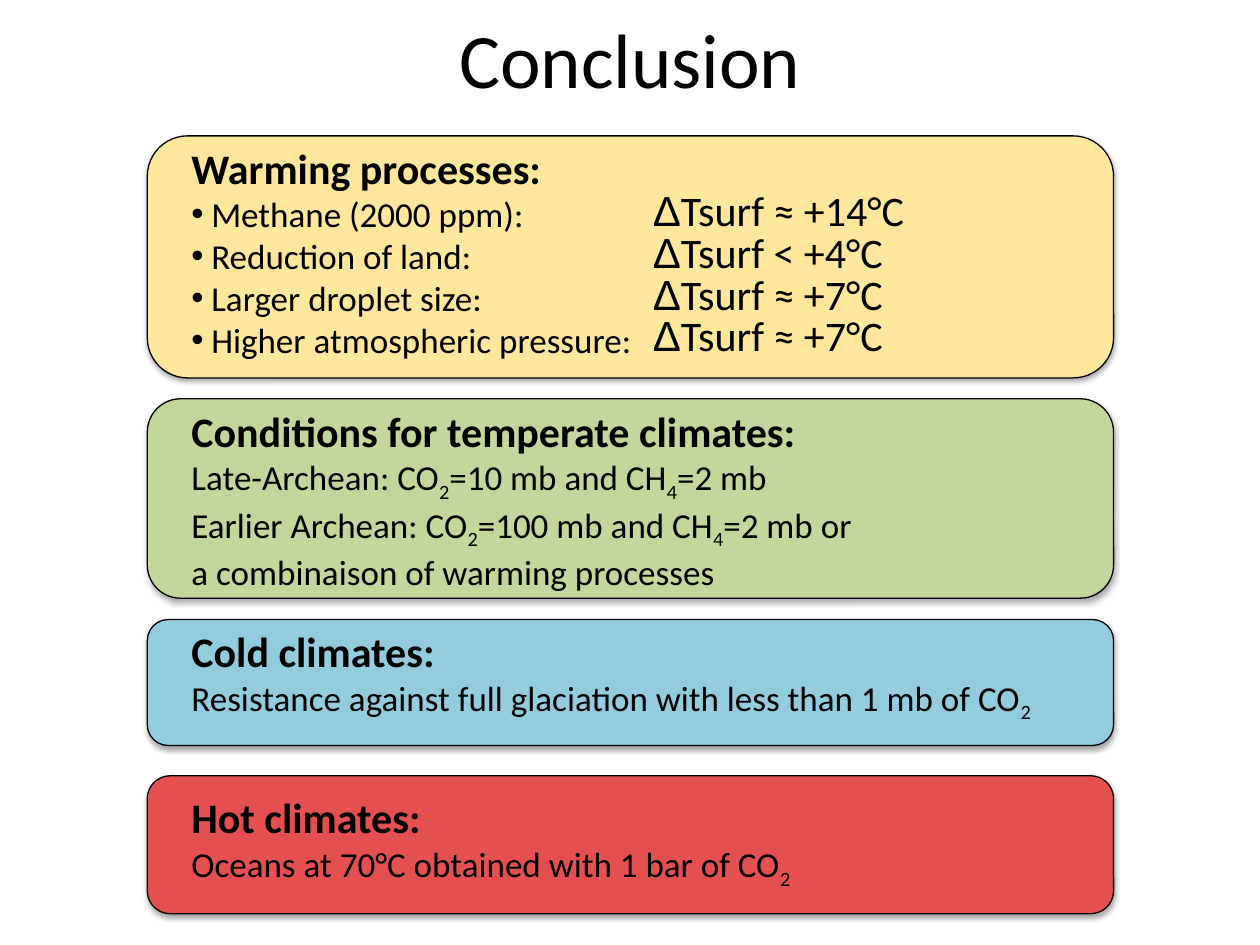
from lxml import etree
from pptx import Presentation
from pptx.dml.color import RGBColor
from pptx.enum.shapes import MSO_SHAPE
from pptx.enum.text import MSO_ANCHOR, MSO_AUTO_SIZE, PP_ALIGN
from pptx.oxml import parse_xml
from pptx.oxml.ns import nsdecls, qn
from pptx.util import Cm, Pt

BLACK = RGBColor(0x00, 0x00, 0x00)
YELLOW = RGBColor(0xFC, 0xE7, 0x9D)
GREEN = RGBColor(0xC3, 0xD6, 0x9B)
BLUE = RGBColor(0x93, 0xCD, 0xDD)
RED = RGBColor(0xE4, 0x4F, 0x4F)

HEADING = {"size": Pt(24), "bold": True}
BODY = {"size": Pt(20), "bold": False}
DELTA = {"size": Pt(24)}

PANEL_X, PANEL_W = 2.97, 19.48
TEXT_INSET = 0.64
BULLET_INDENT = Cm(0.4)
DELTA_X, DELTA_Y, DELTA_STEP = 9.94, 0.86, 0.84

WARMING = [
    ("Methane (2000 ppm):", "Tsurf ≈ +14°C"),
    ("Reduction of land:", "Tsurf < +4°C"),
    ("Larger droplet size:", "Tsurf ≈ +7°C"),
    ("Higher atmospheric pressure:", "Tsurf ≈ +7°C"),
]

# Fill, top, height, text offset, heading, lines; bars enclose subscripts
PANELS = [
    (YELLOW, 2.74, 4.88, 0, "Warming processes:", [name for name, _ in WARMING]),
    (GREEN, 8.04, 4.02, 0, "Conditions for temperate climates:", [
        "Late-Archean: CO|2|=10 mb and CH|4|=2 mb",
        "Earlier Archean: CO|2|=100 mb and CH|4|=2 mb or",
        "a combinaison of warming processes",
    ]),
    (BLUE, 12.49, 2.54, 0, "Cold climates:", [
        "Resistance against full glaciation with less than 1 mb of CO|2|",
    ]),
    (RED, 15.64, 2.78, 0.2, "Hot climates:", [
        "Oceans at 70°C obtained with 1 bar of CO|2|",
    ]),
]


def add_run(p, text, style, name="Calibri"):
    r = p.add_run()
    r.text = text
    r.font.color.rgb = BLACK
    for key, value in {"name": name, **style}.items():
        setattr(r.font, key, value)
    return r


def add_line(p, text, style):
    """Write text whose parts between bars are subscripts."""
    for i, part in enumerate(text.split("|")):
        if part:
            r = add_run(p, part, style)
            if i % 2:
                r.font._element.set("baseline", "-25000")


def add_bullet(p):
    pPr = p._p.get_or_add_pPr()
    pPr.set("marL", str(BULLET_INDENT))
    pPr.set("indent", str(-BULLET_INDENT))
    etree.SubElement(pPr, qn("a:buFont")).set("typeface", "Arial")
    etree.SubElement(pPr, qn("a:buChar")).set("char", "•")


def add_text_box(s, x, y, w, h):
    tf = s.shapes.add_textbox(Cm(x), Cm(y), Cm(w), Cm(h)).text_frame
    tf.word_wrap = True
    return tf


def add_title(s, x, y, w, h):
    tf = add_text_box(s, x, y, w, h)
    tf.vertical_anchor = MSO_ANCHOR.MIDDLE
    p = tf.paragraphs[0]
    p.alignment = PP_ALIGN.CENTER
    add_run(p, "Conclusion", {"size": Pt(44)})


def add_card(s, x, y, w, h, fill):
    sp = s.shapes.add_shape(MSO_SHAPE.ROUNDED_RECTANGLE, Cm(x), Cm(y), Cm(w), Cm(h))
    sp.fill.solid()
    sp.fill.fore_color.rgb = fill
    sp.line.color.rgb = BLACK
    sp.line.width = Pt(0.75)
    sp._element.spPr.append(parse_xml(
        f'<a:effectLst {nsdecls("a")}><a:outerShdw blurRad="40000" dist="23000" '
        'dir="5400000" rotWithShape="0"><a:srgbClr val="000000">'
        '<a:alpha val="35000"/></a:srgbClr></a:outerShdw></a:effectLst>'))


def add_panel(s, x, y, w, h, fill, offset, heading, lines, bulleted):
    add_card(s, x, y, w, h, fill)
    tf = add_text_box(s, x + TEXT_INSET, y + offset, w - TEXT_INSET, h - offset)
    tf.auto_size = MSO_AUTO_SIZE.SHAPE_TO_FIT_TEXT
    add_line(tf.paragraphs[0], heading, HEADING)
    for line in lines:
        p = tf.add_paragraph()
        add_line(p, line, BODY)
        if bulleted:
            add_bullet(p)


def add_temperature_changes(s, x, y):
    """Set one value beside each bullet of the panel at x, y."""
    for i, (_, change) in enumerate(WARMING):
        tf = add_text_box(s, x + DELTA_X, y + DELTA_Y + i * DELTA_STEP, 6.35, 1.27)
        p = tf.paragraphs[0]
        add_run(p, "Δ", DELTA, "Arial")
        add_run(p, change, DELTA)


def main():
    prs = Presentation()
    prs.slide_width, prs.slide_height = Cm(25.4), Cm(19.05)
    s = prs.slides.add_slide(prs.slide_layouts[6])
    add_title(s, 1.27, -0.43, 22.86, 3.18)
    for fill, y, h, offset, heading, lines in PANELS:
        add_panel(s, PANEL_X, y, PANEL_W, h, fill, offset, heading, lines,
                  bulleted=fill == YELLOW)
    add_temperature_changes(s, PANEL_X, PANELS[0][1])
    prs.save("out.pptx")


if __name__ == "__main__":
    main()
